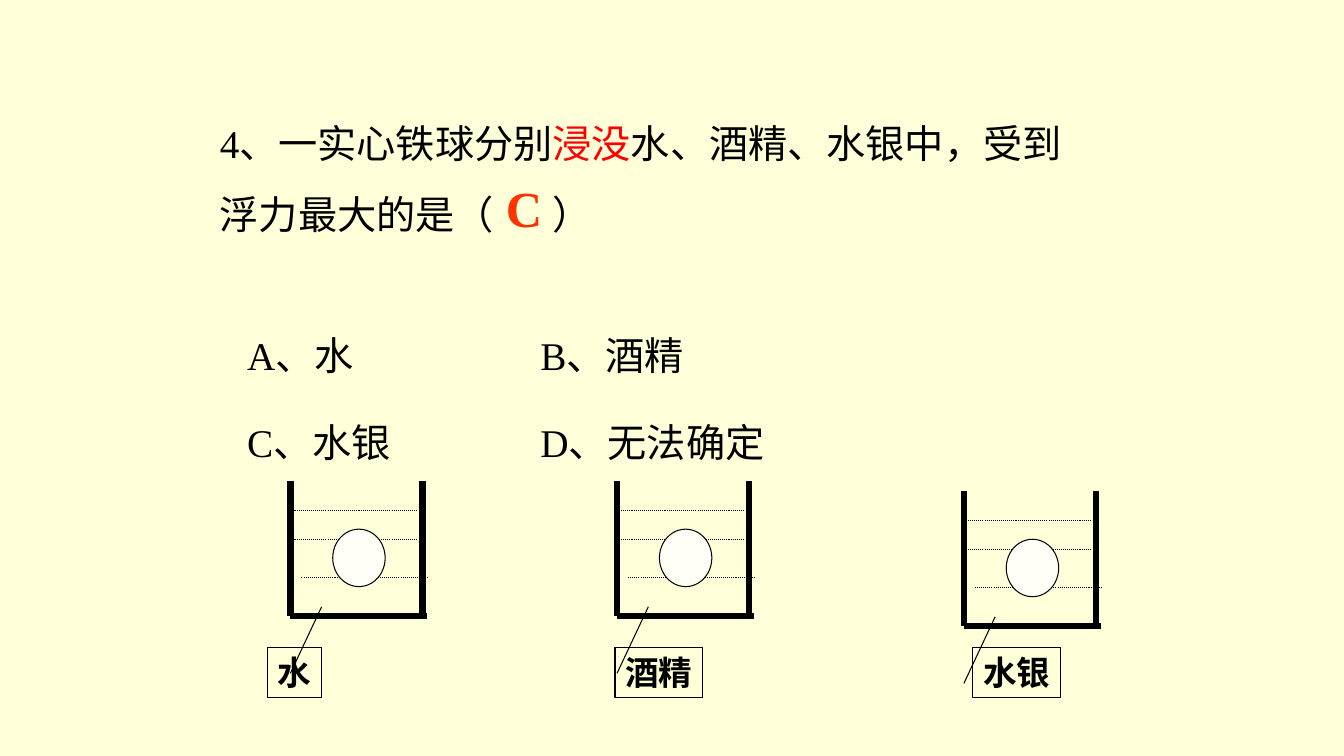
"""Build a quiz slide on the buoyancy of an iron ball in three liquids."""
import pptx
import pptx.dml.color
import pptx.enum.dml
import pptx.enum.shapes
import pptx.enum.text
import pptx.oxml.ns
import pptx.util
from pptx.util import Inches
from lxml import etree

COLORS = {
    "background": "FFFFD9", "ink": "000000", "keyword": "FF0000",
    "answer": "FF3300", "ball": "FFFFF7",
}
FONT = "Times New Roman"
ANSWER_GAP = 42
QUESTION = [
    ("4、一实心铁球分别", "ink", 0),
    ("浸没", "keyword", 0),
    ("水、酒精、水银中，受到浮力最大的是", "ink", 0),
    ("（", "ink", ANSWER_GAP),
    ("）", "ink", 0),
]
OPTION_COLUMNS = [
    (2.35, 2.8, ["A、水", "C、水银"]),
    (5.26, 5.74, ["B、酒精", "D、无法确定"]),
]
ANSWER = "C"
BEAKERS = [
    {"corner": (2.88, 4.77), "label": "水", "label_left": 2.65, "label_width": 0.54},
    {"corner": (6.12, 4.77), "label": "酒精", "label_left": 6.1, "label_width": 0.87},
    {"corner": (9.56, 4.87), "label": "水银", "label_left": 9.65, "label_width": 0.87},
]
WALLS = [(0, 0, 0, 1.34), (0, 1.34, 1.36, 1.34), (1.31, 0, 1.31, 1.34)]
LIQUID = [(0, 0.29, 1.25, 0.29), (0, 0.58, 1.25, 0.58), (0.11, 0.96, 1.36, 0.96)]
POINTER = (0.31, 1.25, 0, 1.91)
BALL = (0.42, 0.48, 0.52, 0.57)
LABEL_TOP, LABEL_HEIGHT = 6.42, 0.5


def rgb(name):
    return pptx.dml.color.RGBColor.from_string(COLORS[name])


def add_span(para, text, size, color="ink", bold=False, gap=0):
    span = para.add_run()
    span.text = text
    span.font.name = FONT
    span.font.size = pptx.util.Pt(size)
    span.font.bold = bold
    span.font.color.rgb = rgb(color)
    if gap:
        span._r.get_or_add_rPr().set("spc", str(gap * 100))


def set_place(box, left, top, width, height):
    box.left, box.top = Inches(left), Inches(top)
    box.width, box.height = Inches(width), Inches(height)
    box.text_frame.word_wrap = True
    box.text_frame.auto_size = pptx.enum.text.MSO_AUTO_SIZE.NONE
    box.text_frame.vertical_anchor = pptx.enum.text.MSO_ANCHOR.TOP


def set_layout(para, space_before=0):
    properties = para._p.get_or_add_pPr()
    properties.set("marL", "0")
    properties.set("indent", "0")
    etree.SubElement(properties, pptx.oxml.ns.qn("a:buNone"))
    para.alignment = pptx.enum.text.PP_ALIGN.LEFT
    para.line_spacing = 1.5
    para.space_before = pptx.util.Pt(space_before)


def add_line(slide, corner, ends, width, dash=None):
    left, top = corner
    x1, y1, x2, y2 = ends
    line = slide.shapes.add_connector(
        pptx.enum.shapes.MSO_CONNECTOR.STRAIGHT,
        Inches(left + x1), Inches(top + y1), Inches(left + x2), Inches(top + y2))
    line.line.color.rgb = rgb("ink")
    line.line.width = pptx.util.Pt(width)
    if dash:
        line.line.dash_style = dash
    etree.SubElement(line._element.spPr, pptx.oxml.ns.qn("a:effectLst"))


def add_outlined(slide, kind, place, fill=None):
    shape = slide.shapes.add_shape(kind, *[Inches(value) for value in place])
    shape.shadow.inherit = False
    if fill:
        shape.fill.solid()
        shape.fill.fore_color.rgb = rgb(fill)
    else:
        shape.fill.background()
    shape.line.color.rgb = rgb("ink")
    shape.line.width = pptx.util.Pt(0.75)
    return shape


def add_beaker(slide, beaker):
    corner = beaker["corner"]
    for ends in WALLS:
        add_line(slide, corner, ends, 4.5)
    for ends in LIQUID:
        add_line(slide, corner, ends, 0.75, pptx.enum.dml.MSO_LINE.ROUND_DOT)
    x, y, width, height = BALL
    add_outlined(slide, pptx.enum.shapes.MSO_SHAPE.OVAL,
                 (corner[0] + x, corner[1] + y, width, height), "ball")
    add_line(slide, corner, POINTER, 0.75)
    label = add_outlined(
        slide, pptx.enum.shapes.MSO_SHAPE.RECTANGLE,
        (beaker["label_left"], LABEL_TOP, beaker["label_width"], LABEL_HEIGHT))
    label.text_frame.word_wrap = False
    add_span(label.text_frame.paragraphs[0], beaker["label"], 24, bold=True)


def main():
    deck = pptx.Presentation()
    deck.slide_width, deck.slide_height = Inches(13.33), Inches(7.5)
    slide = deck.slides.add_slide(deck.slide_layouts.get_by_name("Two Content"))
    slide.background.fill.solid()
    slide.background.fill.fore_color.rgb = rgb("background")

    title = slide.shapes.title
    set_place(title, 2.08, 0.9, 8.92, 1.5)
    para = title.text_frame.paragraphs[0]
    set_layout(para)
    for text, color, gap in QUESTION:
        add_span(para, text, 28, color, gap=gap)

    for number, (left, width, options) in enumerate(OPTION_COLUMNS, start=1):
        body = slide.placeholders[number]
        set_place(body, left, 3, width, 1.75)
        for index, option in enumerate(options):
            para = body.text_frame.add_paragraph() if index else body.text_frame.paragraphs[0]
            set_layout(para, 12 if index else 0)
            add_span(para, option, 28)

    for beaker in BEAKERS:
        add_beaker(slide, beaker)

    answer = slide.shapes.add_textbox(0, 0, 0, 0)
    set_place(answer, 4.92, 1.7, 0.67, 0.71)
    answer.text_frame.vertical_anchor = pptx.enum.text.MSO_ANCHOR.BOTTOM
    add_span(answer.text_frame.paragraphs[0], ANSWER, 36, "answer", True)

    deck.save("out.pptx")


if __name__ == "__main__":
    main()
